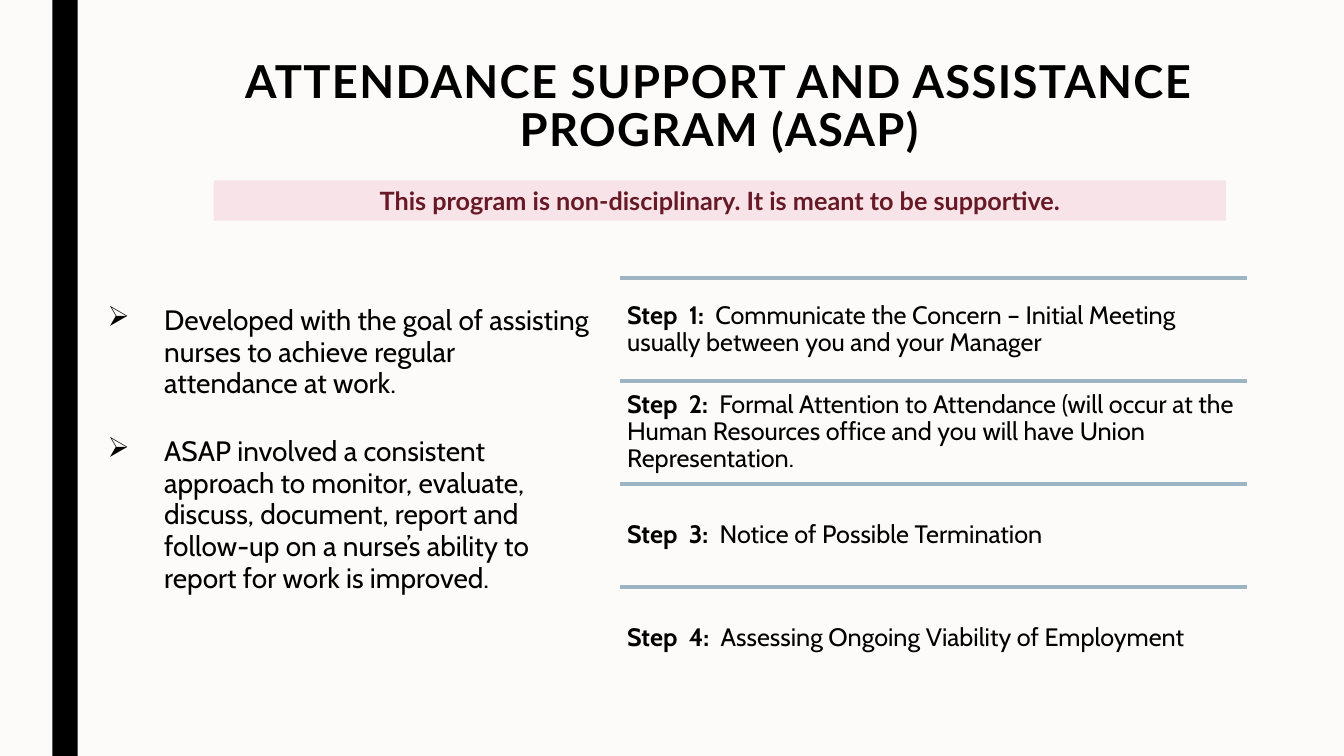
from dataclasses import dataclass

import pptx
import pptx.dml.color
import pptx.enum.shapes
import pptx.enum.text
import pptx.oxml.ns
import pptx.util
from lxml import etree
from pptx.util import Inches

COLORS = {
    "background": "FCFBF9",
    "black": "000000",
    "banner": "F8E4E8",
    "banner_text": "671926",
    "rule": "9DB5C2",
}
STEP_LEFT, STEP_TOP, STEP_WIDTH, STEP_HEIGHT = 6.15, 2.76, 6.22, 1.02
ALIGN = pptx.enum.text.PP_ALIGN
ANCHOR = pptx.enum.text.MSO_ANCHOR


@dataclass(frozen=True)
class Area:
    left: float
    top: float
    width: float
    height: float

    def lengths(self) -> tuple:
        return tuple(map(Inches, (self.left, self.top, self.width, self.height)))


@dataclass(frozen=True)
class Step:
    label: str
    text: str


GOALS = [
    "Developed with the goal of assisting nurses to achieve regular attendance at work.",
    "ASAP involved a consistent approach to monitor, evaluate, discuss, document, "
    "report and follow-up on a nurse’s ability to report for work is improved.",
]
STEPS = [
    Step("Step  1:  ", "Communicate the Concern – Initial Meeting usually between you "
                       "and your Manager"),
    Step("Step  2:  ", "Formal Attention to Attendance (will occur at the Human Resources "
                       "office and you will have Union Representation."),
    Step("Step  3:  ", "Notice of Possible Termination"),
    Step("Step  4:  ", "Assessing Ongoing Viability of Employment"),
]


def rgb(name: str) -> pptx.dml.color.RGBColor:
    return pptx.dml.color.RGBColor.from_string(COLORS[name])


def style_font(font, name: str, size: float, color: str = "black", bold=None) -> None:
    font.name = name
    font.size = pptx.util.Pt(size)
    font.color.rgb = rgb(color)
    font.bold = bold


def add_block(page, area: Area, color: str):
    """Draw a filled rectangle without outline or shadow."""
    block = page.shapes.add_shape(
        pptx.enum.shapes.MSO_SHAPE.RECTANGLE, *area.lengths())
    block.shadow.inherit = False
    block.fill.solid()
    block.fill.fore_color.rgb = rgb(color)
    block.line.fill.background()
    return block


def add_frame(page, area: Area):
    """Add a wrapping text box and return its text frame."""
    frame = page.shapes.add_textbox(*area.lengths()).text_frame
    frame.word_wrap = True
    return frame


def add_title(page) -> None:
    para = add_frame(page, Area(1.28, 0.54, 11.71, 1.1)).paragraphs[0]
    para.alignment = ALIGN.CENTER
    para.line_spacing = 0.89
    style_font(para.font, "Lato", 32.4, bold=True)
    span = para.add_run()
    span.text = "ATTENDANCE SUPPORT AND ASSISTANCE PROGRAM (ASAP)"
    span.font._element.set("spc", "100")


def add_banner(page) -> None:
    frame = add_block(page, Area(2.12, 1.79, 10.04, 0.4), "banner").text_frame
    frame.word_wrap = True
    para = frame.paragraphs[0]
    para.text = "This program is non-disciplinary. It is meant to be supportive."
    para.alignment = ALIGN.CENTER
    style_font(para.font, "Lato", 18, "banner_text", bold=True)


def add_goals(page) -> None:
    frame = add_frame(page, Area(0.97, 2.98, 5.01, 3.64))
    for index, goal in enumerate(GOALS):
        para = frame.add_paragraph() if index else frame.paragraphs[0]
        para.text = goal
        para.line_spacing = 0.94
        para.space_after = pptx.util.Pt(26)
        style_font(para.font, "Cabin", 20)
        properties = para._p.get_or_add_pPr()
        properties.set("marL", str(Inches(0.56)))
        properties.set("indent", str(Inches(-0.56)))
        bullet = etree.Element(pptx.oxml.ns.qn("a:buChar"), char="➢")
        properties.find(pptx.oxml.ns.qn("a:defRPr")).addprevious(bullet)


def add_step(page, step: Step, top: float) -> None:
    """Draw one step with the rule along its top edge."""
    rule = page.shapes.add_connector(
        pptx.enum.shapes.MSO_CONNECTOR.STRAIGHT, Inches(STEP_LEFT), Inches(top),
        Inches(STEP_LEFT + STEP_WIDTH), Inches(top))
    rule.line.color.rgb = rgb("rule")
    rule.line.width = pptx.util.Pt(2.75)
    etree.SubElement(rule._element.spPr, pptx.oxml.ns.qn("a:effectLst"))

    frame = add_frame(page, Area(STEP_LEFT, top, STEP_WIDTH, STEP_HEIGHT))
    frame.vertical_anchor = ANCHOR.MIDDLE
    frame.margin_left = frame.margin_right = Inches(0.07)
    frame.margin_top = frame.margin_bottom = Inches(0.07)
    para = frame.paragraphs[0]
    para.line_spacing = 0.9
    style_font(para.font, "Cabin", 18)
    for text, bold in ((step.label, True), (step.text, False)):
        span = para.add_run()
        span.text = text
        span.font.bold = bold


def main() -> None:
    deck = pptx.Presentation()
    deck.slide_width, deck.slide_height = Inches(13.33), Inches(7.5)
    page = deck.slides.add_slide(deck.slide_layouts[6])
    page.background.fill.solid()
    page.background.fill.fore_color.rgb = rgb("background")

    add_block(page, Area(0.52, 0, 0.25, 7.5), "black")
    add_title(page)
    add_goals(page)
    add_banner(page)
    for index, step in enumerate(STEPS):
        add_step(page, step, STEP_TOP + index * STEP_HEIGHT)
    deck.save("out.pptx")


if __name__ == "__main__":
    main()
